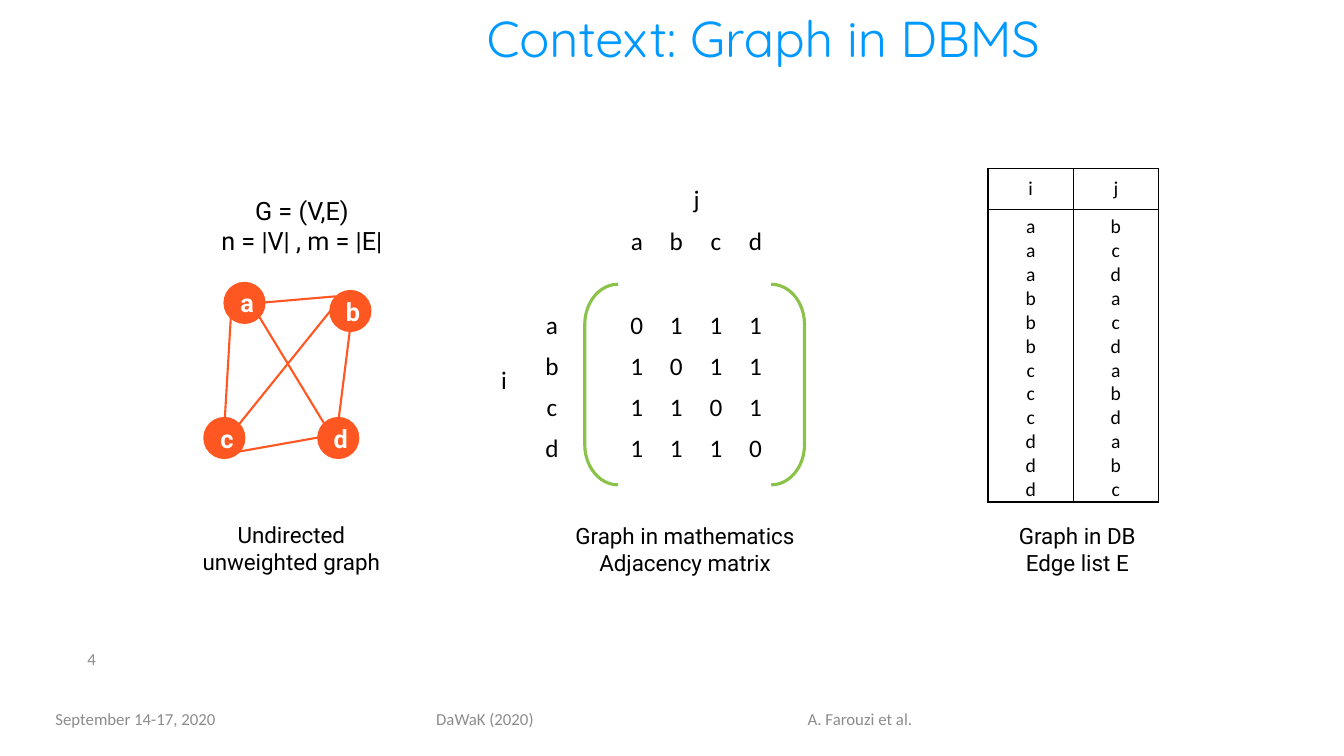
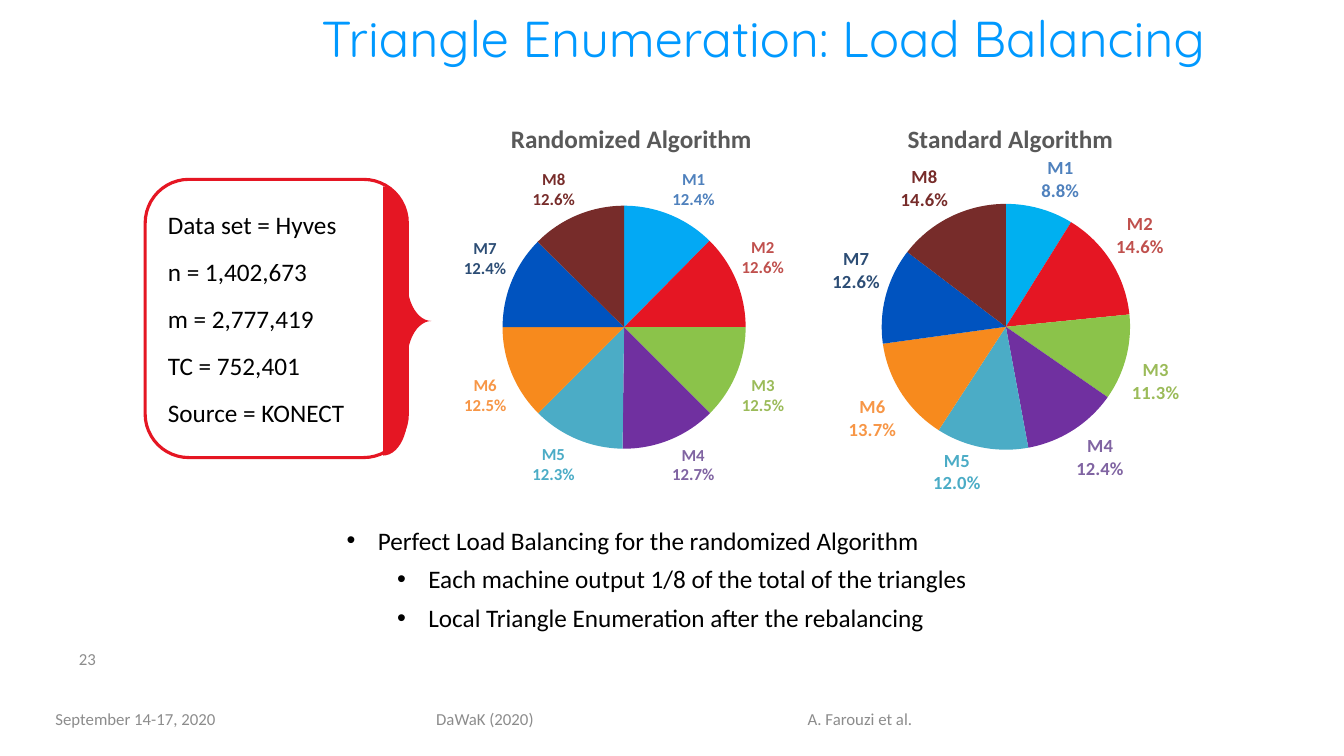
"""Build two slides on graphs in databases and on load balancing."""
from dataclasses import dataclass
from itertools import permutations
from typing import Any, NamedTuple

from pptx import Presentation
from pptx import util as u
from pptx.chart.data import CategoryChartData
from pptx.dml.color import RGBColor
from pptx.enum import chart as charts, shapes, text
from pptx.oxml import parse_xml
from pptx.oxml.ns import nsdecls, qn

BLUE = RGBColor(0x00, 0x99, 0xFF)
ORANGE = RGBColor(0xFF, 0x57, 0x22)
GREEN = RGBColor(0x8B, 0xC3, 0x4A)
RED = RGBColor(0xE5, 0x16, 0x23)
BLACK = RGBColor(0x00, 0x00, 0x00)
WHITE = RGBColor(0xFF, 0xFF, 0xFF)
GREY = RGBColor(0x8C, 0x8C, 0x8C)
DARK_GREY = RGBColor(0x59, 0x59, 0x59)
SKY = RGBColor(0x03, 0xA9, 0xF4)
BRIGHT_SKY = RGBColor(0x00, 0xB0, 0xF0)
SLICES = [RED, GREEN, RGBColor(0x70, 0x30, 0xA0), RGBColor(0x4B, 0xAC, 0xC6),
          RGBColor(0xF7, 0x8A, 0x1D), RGBColor(0x00, 0x53, 0xBF), RGBColor(0x77, 0x2C, 0x2A)]
LABELS = [RGBColor(0x4F, 0x81, 0xBD), RGBColor(0xC0, 0x50, 0x4D), RGBColor(0x9B, 0xBB, 0x59),
          RGBColor(0x80, 0x64, 0xA2), RGBColor(0x4B, 0xAC, 0xC6), RGBColor(0xF7, 0x96, 0x46),
          RGBColor(0x2C, 0x4D, 0x75), RGBColor(0x77, 0x2C, 0x2A)]

CENTER, LEFT, RIGHT = text.PP_ALIGN.CENTER, text.PP_ALIGN.LEFT, text.PP_ALIGN.RIGHT
MIDDLE, TOP = text.MSO_ANCHOR.MIDDLE, text.MSO_ANCHOR.TOP
SHAPE = shapes.MSO_SHAPE
VERTICES = "abcd"


class Box(NamedTuple):
    """Position and size in inches."""
    left: float
    top: float
    width: float
    height: float

    def lengths(self) -> list[u.Length]:
        """Return the four measures as lengths."""
        return [u.Inches(value) for value in self]


@dataclass(frozen=True)
class Style:
    """Look of a run of text."""
    name: str
    size: float
    color: RGBColor = BLACK
    bold: bool = False


@dataclass(frozen=True)
class Label:
    """A text box; lines are split at line breaks."""
    words: str
    box: Box
    style: Style
    align: Any = CENTER
    anchor: Any = MIDDLE


@dataclass(frozen=True)
class Pie:
    """A pie chart with its title and layout fractions."""
    title: str
    title_left: float
    box: Box
    plot: Box
    values: tuple[float, ...]
    first_color: RGBColor
    label_size: float


TITLE = Style("Quicksand", 36, BLUE)
FOOTER = Style("Calibri", 12, GREY)
BODY = Style("Calibri", 18)
SMALL = Style("Calibri", 14)
FORMULA = Style("Roboto", 18)
CAPTION = Style("Roboto", 16)
NODE = Style("Roboto", 18, WHITE, True)
CHART_TITLE = Style("Calibri", 18, DARK_GREY, True)

FOOTERS = [
    Label("September 14-17, 2020", Box(0.36, 6.96, 1.97, 0.35), FOOTER),
    Label("DaWaK (2020)", Box(3.34, 6.96, 2.94, 0.35), FOOTER),
    Label("A. Farouzi et al.", Box(7.73, 6.96, 1.6, 0.35), FOOTER),
]
GRAPH_LABELS = [
    Label("i", Box(4.82, 3.57, 0.36, 0.4), BODY, anchor=TOP),
    Label("j", Box(6.73, 1.77, 0.36, 0.4), BODY, anchor=TOP),
    Label("G = (V,E)\nn = |V| , m = |E|", Box(2.01, 1.72, 1.97, 1.03), FORMULA),
    Label("Undirected unweighted graph", Box(1.91, 5.12, 1.96, 0.64), CAPTION),
    Label("Graph in mathematics\nAdjacency matrix", Box(5.06, 5.14, 3.47, 0.62), CAPTION),
    Label("Graph in DB\nEdge list E", Box(9.55, 5.14, 2.27, 0.62), CAPTION),
]
NODES = dict(zip(VERTICES, [(2.23, 2.81), (3.28, 2.89), (2.03, 4.15), (3.16, 4.15)]))
EDGES = [
    (2.63, 3, 3.33, 2.94), (3.47, 3.28, 3.36, 4.15), (3.16, 4.34, 2.37, 4.48),
    (2.29, 3.14, 2.23, 4.15), (2.57, 3.14, 3.22, 4.21), (3.28, 3.08, 2.37, 4.21),
]
PIES = [
    Pie("Randomized Algorithm", 0.2, Box(4.28, 1.16, 3.71, 3.83), Box(0.19, 0.22, 0.65, 0.65),
        (12.4, 12.6, 12.5, 12.7, 12.3, 12.5, 12.4, 12.6), SKY, 12),
    Pie("Standard Algorithm", 0.22, Box(8.14, 1.16, 3.71, 3.79), Box(0.16, 0.23, 0.67, 0.65),
        (8.8, 14.6, 11.3, 12.4, 12, 13.7, 12.6, 14.6), BRIGHT_SKY, 13.3),
]
BULLETS = [
    (0, "Perfect Load Balancing for the randomized Algorithm"),
    (1, "Each machine output 1/8 of the total of the triangles"),
    (1, "Local Triangle Enumeration after the rebalancing"),
]
DATA_FACTS = "\n".join(["Data set = Hyves", "n = 1,402,673", "m = 2,777,419",
                        "TC = 752,401", "Source = KONECT"])


def apply(target: Any, values: dict[str, Any]) -> None:
    """Set each named attribute on the target."""
    for name, value in values.items():
        setattr(target, name, value)


def set_font(font: Any, style: Style) -> None:
    """Give a font the look of a style."""
    apply(font, {"name": style.name, "size": u.Pt(style.size), "bold": style.bold})
    font.color.rgb = style.color


def write(frame: Any, words: str, style: Style, align: Any = CENTER, after: float = 0) -> None:
    """Fill a text frame with one paragraph a line."""
    for index, line in enumerate(words.split("\n")):
        para = frame.add_paragraph() if index else frame.paragraphs[0]
        apply(para, {"alignment": align, "space_after": u.Pt(after)})
        span = para.add_run()
        span.text = line
        set_font(span.font, style)


def add_label(page: Any, label: Label) -> Any:
    """Draw a text box and return its frame."""
    frame = page.shapes.add_textbox(*label.box.lengths()).text_frame
    apply(frame, {"word_wrap": True, "vertical_anchor": label.anchor})
    write(frame, label.words, label.style, label.align)
    return frame


def add_shape(page: Any, kind: Any, box: Box, fill: RGBColor | None = None,
              line: RGBColor | None = None, weight: float = 2.25) -> Any:
    """Draw a preset shape without a shadow."""
    shape = page.shapes.add_shape(kind, *box.lengths())
    shape.shadow.inherit = False
    for paint, color in ((shape.fill, fill), (shape.line.fill, line)):
        if color is None:
            paint.background()
        else:
            paint.solid()
            paint.fore_color.rgb = color
    if line is not None:
        shape.line.width = u.Pt(weight)
    return shape


def add_edge(page: Any, ends: tuple[float, ...]) -> None:
    """Draw one edge of the graph."""
    edge = page.shapes.add_connector(shapes.MSO_CONNECTOR.STRAIGHT, *map(u.Inches, ends))
    edge.line.color.rgb = ORANGE
    edge.line.width = u.Pt(1.5)
    edge._element.spPr.append(parse_xml(f"<a:effectLst {nsdecls('a')}/>"))


def add_grid(page: Any, box: Box, rows: list[list[str]], style: Style) -> Any:
    """Draw a plain white table with equal rows and columns."""
    table = page.shapes.add_table(len(rows), len(rows[0]), *box.lengths()).table
    apply(table, {"first_row": False, "horz_banding": False})
    for row, line in zip(rows, table.rows):
        for words, cell in zip(row, line.cells):
            cell.fill.solid()
            cell.fill.fore_color.rgb = WHITE
            cell.vertical_anchor = MIDDLE
            write(cell.text_frame, words, style)
    return table


def add_borders(cell: Any) -> None:
    """Give a cell thin black borders."""
    for index, side in enumerate("LRTB"):
        cell._tc.get_or_add_tcPr().insert(index, parse_xml(
            f'<a:ln{side} {nsdecls("a")} w="12700"><a:solidFill>'
            f'<a:srgbClr val="{BLACK}"/></a:solidFill></a:ln{side}>'))


def place(parent: Any, index: int, measures: dict[str, float], inner: bool = False) -> None:
    """Give a chart part a manual layout in fractions of the chart."""
    for old in parent.findall(qn("c:layout")):
        parent.remove(old)
    target = '<c:layoutTarget val="inner"/>' if inner else ""
    modes = '<c:xMode val="edge"/><c:yMode val="edge"/>'
    sizes = "".join(f'<c:{key} val="{value}"/>' for key, value in measures.items())
    parent.insert(index, parse_xml(f'<c:layout {nsdecls("c")}><c:manualLayout>{target}{modes}{sizes}'
                                   "</c:manualLayout></c:layout>"))


def point_label(index: int, size: float, color: RGBColor) -> Any:
    """Return the label element of one slice."""
    shows = {"LegendKey": 0, "Val": 0, "CatName": 1, "SerName": 0, "Percent": 1, "BubbleSize": 0}
    flags = "".join(f'<c:show{key} val="{value}"/>' for key, value in shows.items())
    return parse_xml(
        f'<c:dLbl {nsdecls("c", "a")}><c:idx val="{index}"/>'
        '<c:numFmt formatCode="0.0%" sourceLinked="0"/><c:spPr><a:noFill/></c:spPr>'
        f'<c:txPr><a:bodyPr/><a:p><a:pPr><a:defRPr sz="{round(size * 100)}" b="1"><a:solidFill>'
        f'<a:srgbClr val="{color}"/></a:solidFill><a:latin typeface="Calibri"/></a:defRPr></a:pPr>'
        '<a:endParaRPr lang="en-US"/></a:p></c:txPr>'
        f'<c:dLblPos val="outEnd"/>{flags}<c:separator>\n</c:separator></c:dLbl>')


def add_pie(page: Any, pie: Pie) -> None:
    """Draw a pie chart with coloured labels outside."""
    data = CategoryChartData()
    data.categories = [f"M{number}" for number in range(1, len(pie.values) + 1)]
    data.add_series("Series 1", pie.values)
    chart = page.shapes.add_chart(charts.XL_CHART_TYPE.PIE, *pie.box.lengths(), data).chart
    apply(chart, {"has_legend": False, "has_title": True})
    set_font(chart.font, Style("Calibri", 10))
    write(chart.chart_title.text_frame, pie.title, CHART_TITLE)
    place(chart.chart_title._element, 1, {"x": pie.title_left, "y": 0})
    place(chart._chartSpace.chart.plotArea, 0, dict(zip("xywh", pie.plot)), inner=True)
    plot = chart.plots[0]
    plot.vary_by_categories = True
    series = plot.series[0]
    for index, color in enumerate([pie.first_color, *SLICES]):
        paint = series.points[index].format.fill
        paint.solid()
        paint.fore_color.rgb = color
    labels = series.data_labels
    apply(labels, {"show_value": False, "show_category_name": True, "show_percentage": True,
                   "number_format": "0.0%", "number_format_is_linked": False,
                   "position": charts.XL_LABEL_POSITION.OUTSIDE_END})
    for index, color in enumerate(LABELS):
        labels._element.insert(index, point_label(index, pie.label_size, color))


def add_page(deck: Any, title: str, number: int) -> Any:
    """Add a slide with its title, number and footers."""
    page = deck.slides.add_slide(deck.slide_layouts[6])
    add_label(page, Label(title, Box(2.47, 0.06, 10.2, 0.62), TITLE))
    for label in [Label(str(number), Box(0, 6.34, 1.05, 0.4), FOOTER, RIGHT), *FOOTERS]:
        add_label(page, label)
    return page


def build_graph_page(deck: Any) -> None:
    """Show a graph, its adjacency matrix and its edge list."""
    page = add_page(deck, "Context: Graph in DBMS", 4)
    for name, (left, top) in NODES.items():
        node = add_shape(page, SHAPE.OVAL, Box(left, top, 0.39, 0.39), ORANGE, ORANGE, 2)
        apply(node.text_frame, {"word_wrap": False, "vertical_anchor": MIDDLE, "margin_right": 0,
                                "margin_left": u.Inches(0.05), "margin_top": 0, "margin_bottom": 0})
        write(node.text_frame, name, NODE)
    for ends in EDGES:
        add_edge(page, ends)
    matrix = [[str(int(row != column)) for column in VERTICES] for row in VERTICES]
    add_grid(page, Box(6.12, 3.03, 1.57, 1.63), matrix, BODY)
    add_grid(page, Box(6.12, 2.19, 1.57, 0.41), [list(VERTICES)], BODY)
    add_grid(page, Box(5.28, 3.03, 0.39, 1.63), [[name] for name in VERTICES], BODY)
    for left, flip in ((5.8, "0"), (7.65, "1")):
        bracket = add_shape(page, SHAPE.LEFT_BRACKET, Box(left, 2.82, 0.33, 1.99), line=GREEN)
        bracket.adjustments[0] = 1.21
        bracket._element.spPr.xfrm.set("flipH", flip)
    columns = ["\n".join(ends) for ends in zip(*permutations(VERTICES, 2))]
    edges = add_grid(page, Box(9.8, 1.67, 1.69, 3.31), [["i", "j"], columns], SMALL)
    for row, height in zip(edges.rows, (0.41, 2.9)):
        row.height = u.Inches(height)
        for cell in row.cells:
            cell.margin_bottom = 0 if height > 1 else u.Inches(0.05)
            add_borders(cell)
    for label in GRAPH_LABELS:
        add_label(page, label)


def build_balance_page(deck: Any) -> None:
    """Compare the load of two algorithms."""
    page = add_page(deck, "Triangle Enumeration: Load Balancing", 23)
    for pie in PIES:
        add_pie(page, pie)
    words = "\n".join(line for _, line in BULLETS)
    frame = add_label(page, Label(words, Box(3.34, 5.16, 7.41, 1.18), BODY, LEFT, TOP))
    for para, (level, _) in zip(frame.paragraphs, BULLETS):
        apply(para, {"level": level, "space_after": u.Pt(6)})
        props = para._p.get_or_add_pPr()
        props.set("marL", str(u.Inches(0.31 + 0.5 * level)))
        props.set("indent", str(u.Inches(-0.31)))
        for bullet in ('buFont {} typeface="Arial"', 'buChar {} char="•"'):
            props.append(parse_xml(f"<a:{bullet.format(nsdecls('a'))}/>"))
    card = add_shape(page, SHAPE.ROUNDED_RECTANGLE, Box(1.44, 1.78, 2.6, 2.76), line=RED)
    card.text_frame.vertical_anchor = MIDDLE
    write(card.text_frame, DATA_FACTS, BODY, LEFT, 12)
    brace = add_shape(page, SHAPE.RIGHT_BRACE, Box(3.8, 1.85, 0.48, 2.67), RED)
    brace.adjustments[0] = 0.8


def main() -> None:
    """Build and save the deck."""
    deck = Presentation()
    apply(deck, {"slide_width": u.Inches(13.33), "slide_height": u.Inches(7.5)})
    build_graph_page(deck)
    build_balance_page(deck)
    deck.save("out.pptx")


if __name__ == "__main__":
    main()
